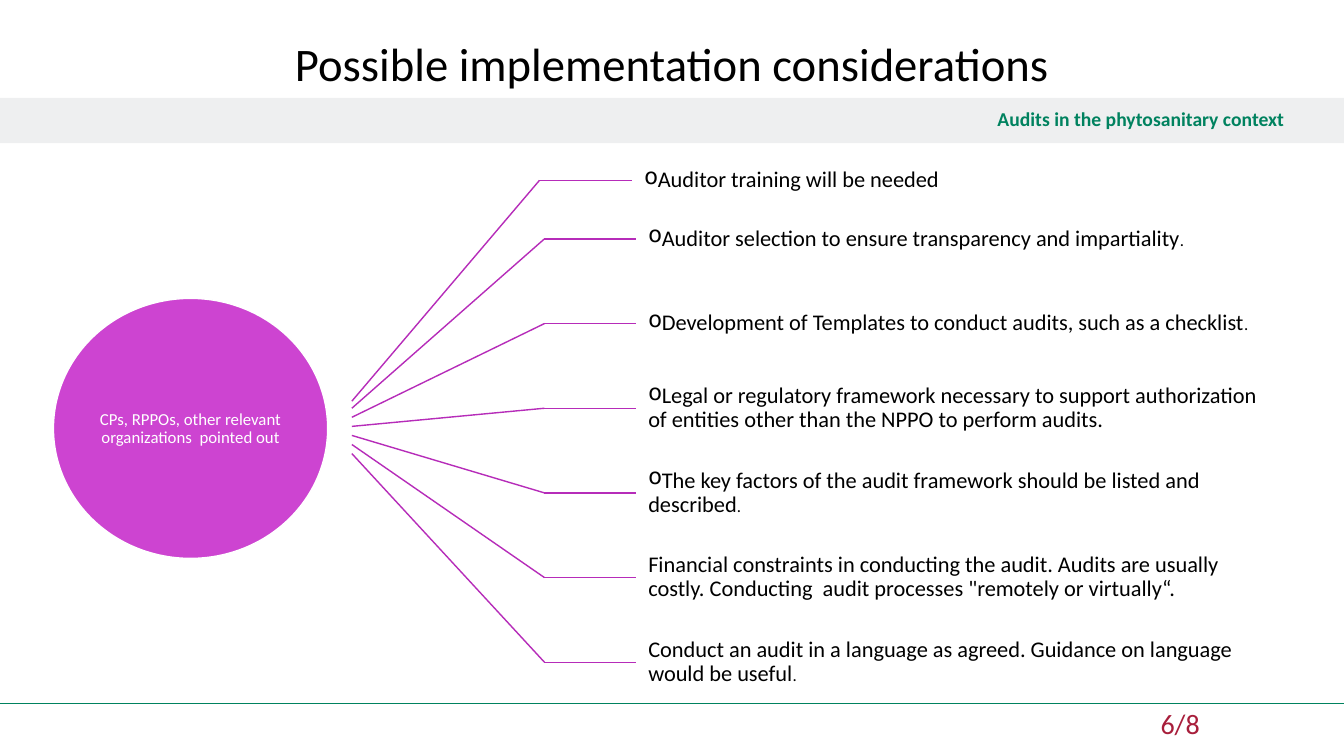
from lxml import etree
from pptx import Presentation
from pptx.dml.color import RGBColor
from pptx.enum.shapes import MSO_CONNECTOR, MSO_SHAPE
from pptx.enum.text import MSO_ANCHOR, PP_ALIGN
from pptx.oxml.ns import qn
from pptx.util import Inches, Pt

LINE = MSO_CONNECTOR.STRAIGHT
RECT, OVAL = MSO_SHAPE.RECTANGLE, MSO_SHAPE.OVAL
TOP, MIDDLE = MSO_ANCHOR.TOP, MSO_ANCHOR.MIDDLE
LEFT, CENTER, RIGHT = PP_ALIGN.LEFT, PP_ALIGN.CENTER, PP_ALIGN.RIGHT

WHITE = RGBColor(0xFF, 0xFF, 0xFF)
BLACK = RGBColor(0x00, 0x00, 0x00)
GREEN = RGBColor(0x00, 0x82, 0x5F)
GREY = RGBColor(0xD8, 0xD9, 0xDC)
RED = RGBColor(0xA8, 0x1E, 0x3B)
PINK = RGBColor(0xC8, 0x30, 0xCC)
PURPLE = RGBColor(0xB6, 0x2C, 0xB9)

# Label text, whether it has a bullet, whether a small full stop follows
LABELS = [
    ("Auditor training will be needed", True, False),
    ("Auditor selection to ensure transparency and impartiality", True, True),
    ("Development of Templates to conduct audits, such as a checklist", True, True),
    ("Legal or regulatory framework necessary to support authorization "
     "of entities other than the NPPO to perform audits.", True, False),
    ("The key factors of the audit framework should be listed and described",
     True, True),
    ("Financial constraints in conducting the audit. Audits are usually costly. "
     "Conducting  audit processes \"remotely or virtually“.", False, False),
    ("Conduct an audit in a language as agreed. Guidance on language "
     "would be useful", False, True),
]


class Page:
    font = "Calibri"

    def __init__(self, deck):
        self.slide = deck.slides.add_slide(deck.slide_layouts[5])
        self.shapes = self.slide.shapes

    def style(self, run, size, color, bold=False):
        run.font.name = self.font
        run.font.size = Pt(size)
        run.font.color.rgb = color
        run.font.bold = bold

    def fill(self, shape, text, size, color, align=LEFT, anchor=MIDDLE,
             pad=(0, 0, 0, 0), bold=False, space=0.9):
        frame = shape.text_frame
        frame.word_wrap = True
        frame.vertical_anchor = anchor
        (frame.margin_left, frame.margin_top,
         frame.margin_right, frame.margin_bottom) = map(Inches, pad)
        frame.text = text
        para = frame.paragraphs[0]
        para.alignment = align
        para.line_spacing = space
        self.style(para.runs[0], size, color, bold)
        return para

    def title(self, text, box, size):
        shape = self.shapes.title
        shape.left, shape.top, shape.width, shape.height = map(Inches, box)
        self.fill(shape, text, size, BLACK, CENTER,
                  pad=(0.1, 0.05, 0.1, 0.05), space=1.0)

    def shape(self, kind, box, fill, alpha, edge=None):
        shape = self.shapes.add_shape(kind, *map(Inches, box))
        shape.shadow.inherit = False
        shape.fill.solid()
        shape.fill.fore_color.rgb = fill
        tone = shape._element.spPr.find(".//" + qn("a:srgbClr"))
        etree.SubElement(tone, qn("a:alpha")).set("val", str(alpha * 1000))
        if edge is None:
            shape.line.fill.background()
        else:
            shape.line.color.rgb = edge
            shape.line.width = Pt(1)
        return shape

    def text(self, box, *args, **style):
        shape = self.shapes.add_textbox(*map(Inches, box))
        return shape, self.fill(shape, *args, **style)

    def line(self, start, end, color):
        line = self.shapes.add_connector(LINE, *map(Inches, start + end))
        line.line.color.rgb = color
        line.line.width = Pt(1)
        etree.SubElement(line._element.spPr, qn("a:effectLst"))
        return line

    def label(self, box, text, bullet, dot):
        shape, para = self.text(box, text, 16, BLACK, pad=(0.12,) * 4)
        if bullet:
            props = para._p.get_or_add_pPr()
            props.set("marL", "0")
            props.set("indent", "0")
            etree.SubElement(props, qn("a:buChar")).set("char", "o")
        if dot:
            run = para.add_run()
            run.text = "."
            self.style(run, 12, BLACK)
        return shape


def main():
    deck = Presentation()
    deck.slide_width, deck.slide_height = Inches(13.33), Inches(7.5)
    page = Page(deck)

    # Title, band and footer
    page.line((0, 6.98), (13.33, 6.98), GREEN)
    band = page.shape(RECT, (0, 0.97, 13.33, 0.45), GREY, 42)
    page.fill(band, "Audits in the phytosanitary context", 14, GREEN, RIGHT,
              pad=(0.59, 0.05, 0.59, 0.05), bold=True)
    page.text((10.92, 7.01, 2.42, 0.39), "6/8", 20, RED, anchor=TOP,
              pad=(0.59, 0, 0.39, 0.05), space=1.0)
    page.title("Possible implementation considerations",
               (0, 0, 13.33, 1.25), 33.3)

    # Hub
    page.shape(OVAL, (0.53, 2.96, 2.72, 2.58), PINK, 90, WHITE)
    page.text((0.93, 3.34, 1.92, 1.83),
              "CPs, RPPOs, other relevant organizations  pointed out",
              12, WHITE, CENTER)

    # Spokes and labels: even rows below a shorter first one
    for i, (text, bullet, dot) in enumerate(LABELS):
        if i == 0:
            root, bend, edge, mid, wide, high = 3.98, 5.35, 6.27, 1.79, 6.53, 0.45
        else:
            root, mid = 4.05 + 0.09 * (i - 1), 2.37 + 0.84 * (i - 1)
            bend, edge, wide, high = 5.4, 6.31, 6.44, 0.84
        page.line((3.49, root), (bend, mid), PURPLE)
        arm = page.line((bend, mid), (edge, mid), PURPLE)
        label = page.label((edge, mid - high / 2, wide, high), text, bullet, dot)
        arm.end_connect(label, 1)

    deck.save("out.pptx")


if __name__ == "__main__":
    main()
